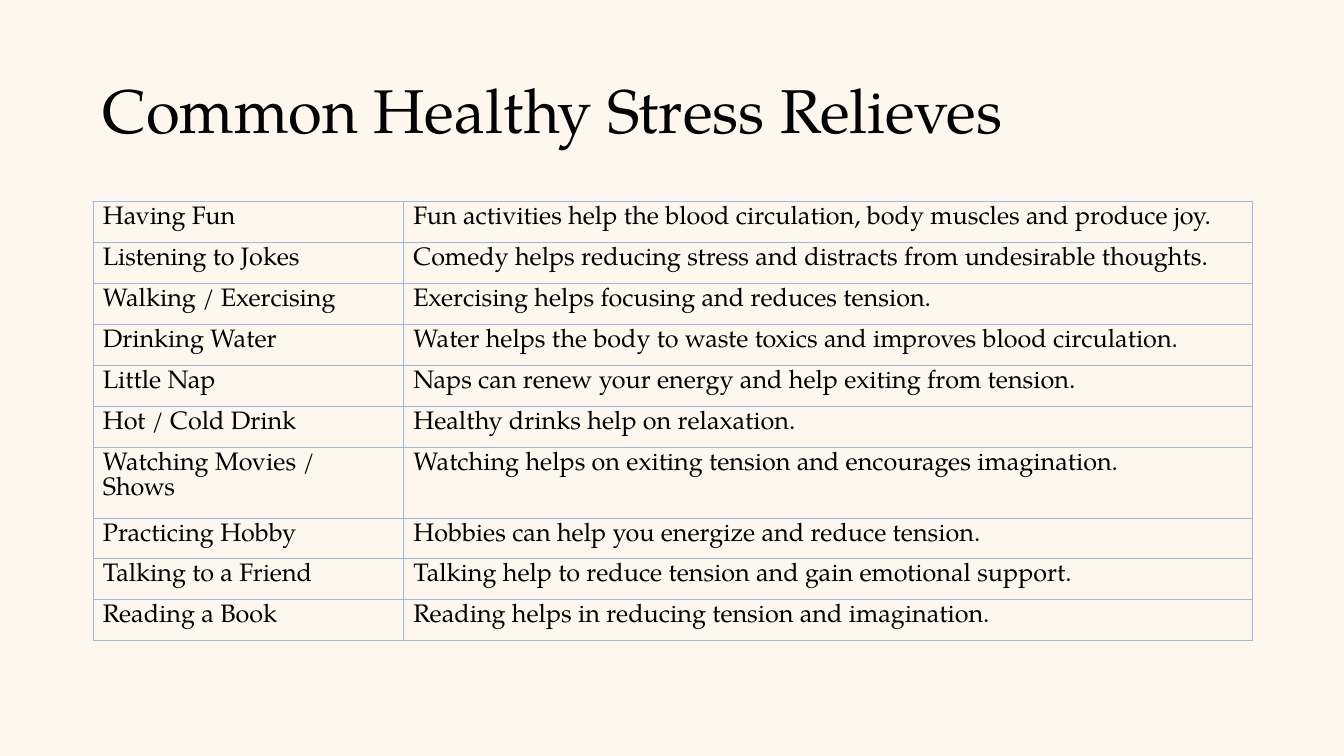
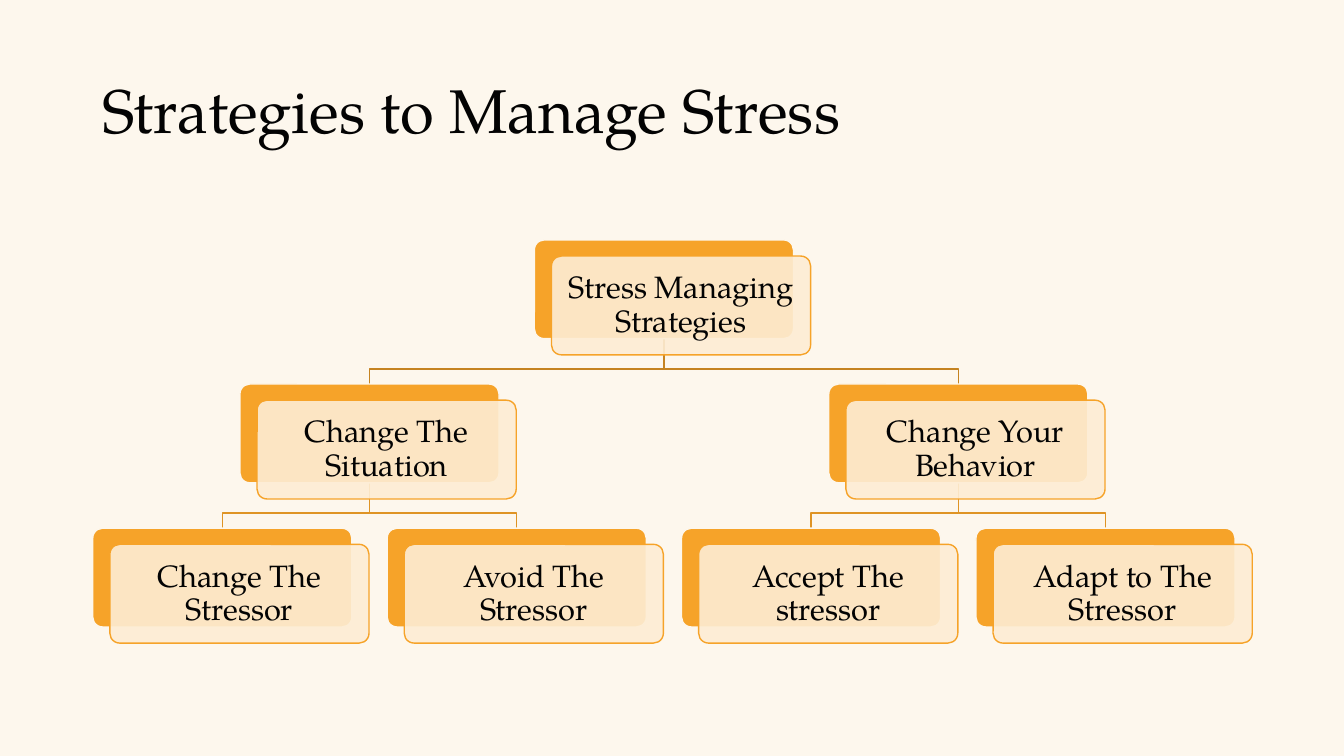
"""Build two slides on relieving and managing stress."""
from lxml import etree
from pptx import Presentation
from pptx.dml.color import RGBColor
from pptx.enum.shapes import MSO_SHAPE
from pptx.enum.text import MSO_ANCHOR, PP_ALIGN
from pptx.oxml.ns import qn
from pptx.util import Inches, Pt

ROUNDED = MSO_SHAPE.ROUNDED_RECTANGLE
MIDDLE = MSO_ANCHOR.MIDDLE
CENTER = PP_ALIGN.CENTER

FONT = "TeX Gyre Pagella"
CREAM, INK, BLACK = "FDF7ED", "030303", "000000"
ORANGE, PEACH, GRID_BLUE = "F6A329", "FDEDD4", "A1B6DF"
LINK_COLORS = ["C58321", "DF9425"]

RELIEF_TITLE = "Common Healthy Stress Relieves"
RELIEFS = [
    ("Having Fun", "Fun activities help the blood circulation, body muscles and produce joy."),
    ("Listening to Jokes", "Comedy helps reducing stress and distracts from undesirable thoughts."),
    ("Walking / Exercising", "Exercising helps focusing and reduces tension."),
    ("Drinking Water", "Water helps the body to waste toxics and improves blood circulation."),
    ("Little Nap", "Naps can renew your energy and help exiting from tension."),
    ("Hot / Cold Drink", "Healthy drinks help on relaxation."),
    ("Watching Movies / Shows", "Watching helps on exiting tension and encourages imagination."),
    ("Practicing Hobby", "Hobbies can help you energize and reduce tension."),
    ("Talking to a Friend", "Talking help to reduce tension and gain emotional support."),
    ("Reading a Book", "Reading helps in reducing tension and imagination."),
]

STRATEGY_TITLE = "Strategies to Manage Stress"
STRATEGIES = ("Stress Managing Strategies", [
    ("Change The Situation", [("Change The Stressor", []), ("Avoid The Stressor", [])]),
    ("Change Your Behavior", [("Accept The stressor", []), ("Adapt to The Stressor", [])]),
])

MARGIN, CONTENT_W = 0.92, 11.5
TABLE_TOP, ROW_H = 2, 0.406
COLUMN_WIDTHS = [3.08, 8.42]
NODE_W, NODE_H = 2.57, 0.98
LEAF_STEP, TREE_TOP, LEVEL_STEP = 2.92, 2.38, 1.43
CARD_DX, CARD_DY, LINK_DROP = 0.17, 0.16, 0.15


def rgb(code):
    return RGBColor.from_string(code)


def write(frame, text, size, color, spacing=None, align=None):
    paragraph = frame.paragraphs[0]
    paragraph.line_spacing = spacing
    paragraph.alignment = align
    run = paragraph.add_run()
    run.text = text
    run.font.name = FONT
    run.font.size = Pt(size)
    run.font.color.rgb = rgb(color)


def titled_slide(prs, title):
    slide = prs.slides.add_slide(prs.slide_layouts[6])
    box = slide.shapes.add_textbox(
        Inches(MARGIN), Inches(0.4), Inches(CONTENT_W), Inches(1.45))
    box.text_frame.word_wrap = True
    box.text_frame.vertical_anchor = MIDDLE
    write(box.text_frame, title, 44, INK, 0.9)
    return slide


def border_cell(cell):
    properties = cell._tc.get_or_add_tcPr()
    for side in ("a:lnL", "a:lnR", "a:lnT", "a:lnB"):
        edge = etree.SubElement(properties, qn(side), w=str(Pt(0.25)))
        fill = etree.SubElement(edge, qn("a:solidFill"))
        etree.SubElement(fill, qn("a:srgbClr"), val=GRID_BLUE)


def add_relief_table(slide):
    table = slide.shapes.add_table(
        len(RELIEFS), len(COLUMN_WIDTHS), Inches(MARGIN), Inches(TABLE_TOP),
        Inches(CONTENT_W), Inches(ROW_H * len(RELIEFS))).table
    table.first_row = table.horz_banding = False
    for column, width in zip(table.columns, COLUMN_WIDTHS):
        column.width = Inches(width)
    for r, relief in enumerate(RELIEFS):
        for c, text in enumerate(relief):
            cell = table.cell(r, c)
            border_cell(cell)
            cell.fill.solid()
            cell.fill.fore_color.rgb = rgb(CREAM)
            write(cell.text_frame, text, 18, BLACK)


def place_tree(node, level=0, first_slot=0):
    """Return the placed node and the next free leaf slot."""
    text, children = node
    placed, slot = [], first_slot
    for child in children:
        branch, slot = place_tree(child, level + 1, slot)
        placed.append(branch)
    if placed:
        left = (placed[0]["left"] + placed[-1]["left"]) / 2
    else:
        left, slot = MARGIN + LEAF_STEP * first_slot, first_slot + 1
    top = TREE_TOP + LEVEL_STEP * level
    return dict(text=text, left=left, top=top, level=level, children=placed), slot


def add_links(slide, node):
    start_x, start_y = node["left"] + NODE_W / 2, node["top"] + NODE_H
    for child in node["children"]:
        end_x, end_y = child["left"] + NODE_W / 2, child["top"]
        bend_y = end_y - LINK_DROP
        builder = slide.shapes.build_freeform(Inches(start_x), Inches(start_y))
        corners = [(start_x, bend_y), (end_x, bend_y), (end_x, end_y)]
        builder.add_line_segments(
            [(Inches(x), Inches(y)) for x, y in corners], close=False)
        link = builder.convert_to_shape()
        link.shadow.inherit = False
        link.fill.background()
        link.line.color.rgb = rgb(LINK_COLORS[node["level"]])
        link.line.width = Pt(1)
        add_links(slide, child)


def add_plate(slide, left, top, fill, line):
    plate = slide.shapes.add_shape(
        ROUNDED, Inches(left), Inches(top), Inches(NODE_W), Inches(NODE_H))
    plate.adjustments[0] = 0.1
    plate.shadow.inherit = False
    plate.fill.solid()
    plate.fill.fore_color.rgb = rgb(fill)
    plate.line.color.rgb = rgb(line)
    plate.line.width = Pt(1)
    return plate


def add_nodes(slide, node):
    left, top = node["left"], node["top"]
    add_plate(slide, left, top, ORANGE, CREAM)
    card = add_plate(slide, left + CARD_DX, top + CARD_DY, PEACH, ORANGE)
    tint = card._element.spPr.find(qn("a:solidFill")).find(qn("a:srgbClr"))
    etree.SubElement(tint, qn("a:alpha"), val="90000")
    frame = card.text_frame
    frame.word_wrap = True
    frame.vertical_anchor = MIDDLE
    frame.margin_left = frame.margin_right = Inches(0.09)
    frame.margin_top = frame.margin_bottom = Inches(0.09)
    write(frame, node["text"], 22, INK, 0.9, CENTER)
    for child in node["children"]:
        add_nodes(slide, child)


def main():
    prs = Presentation()
    prs.slide_width, prs.slide_height = Inches(13.33), Inches(7.5)
    backdrop = prs.slide_master.background.fill
    backdrop.solid()
    backdrop.fore_color.rgb = rgb(CREAM)

    add_relief_table(titled_slide(prs, RELIEF_TITLE))

    strategy_slide = titled_slide(prs, STRATEGY_TITLE)
    root, _ = place_tree(STRATEGIES)
    add_links(strategy_slide, root)
    add_nodes(strategy_slide, root)
    prs.save("out.pptx")


if __name__ == "__main__":
    main()
